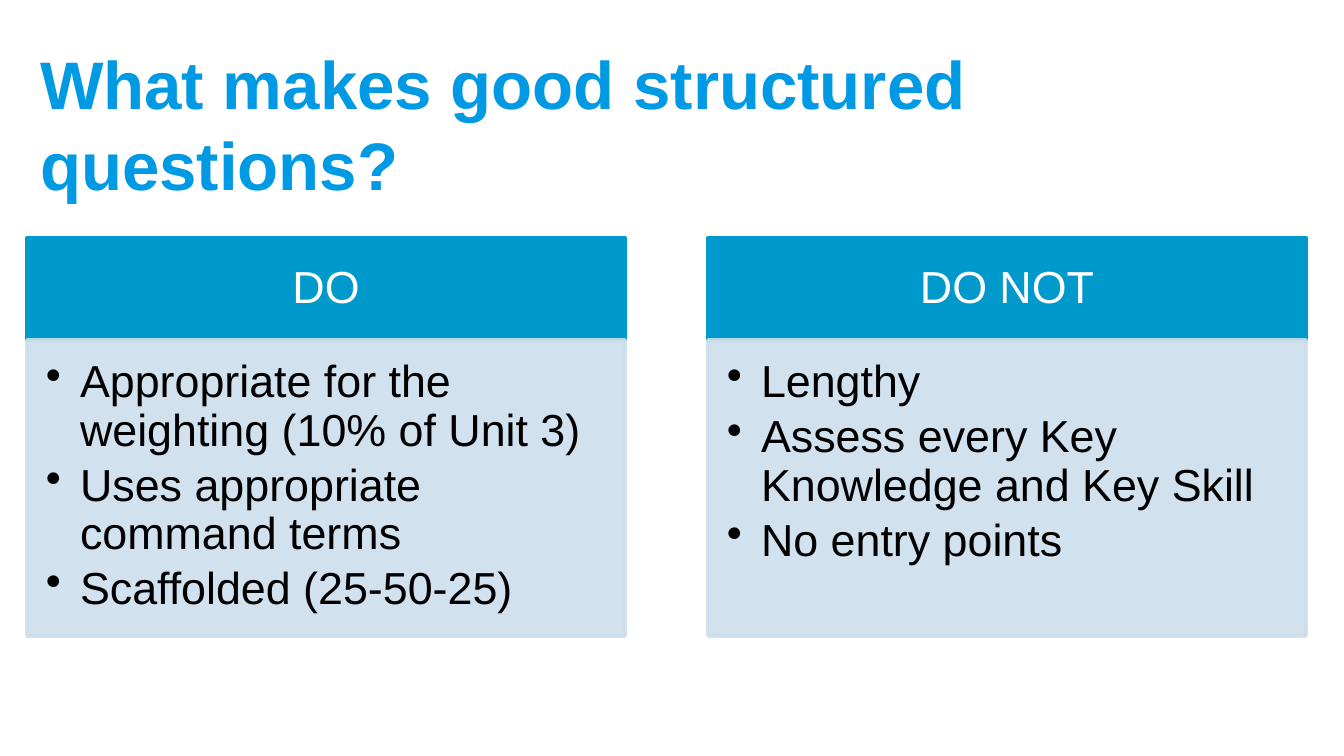
from pptx import Presentation
from pptx.dml.color import RGBColor
from pptx.enum.shapes import MSO_SHAPE as SHAPE
from pptx.enum.text import MSO_ANCHOR as ANCHOR, PP_ALIGN as ALIGN
from pptx.oxml.ns import qn
from pptx.util import Pt
from lxml.etree import SubElement

PX = 914400 / 134.4
COLORS = {"title": "0099E3", "header": "0099CC", "body": "CCDEEC",
          "white": "FFFFFF", "black": "000000"}
COLUMNS = [
    ("DO", ["Appropriate for the weighting (10% of Unit 3)",
            "Uses appropriate command terms",
            "Scaffolded (25-50-25)"]),
    ("DO NOT", ["Lengthy",
                "Assess every Key Knowledge and Key Skill",
                "No entry points"]),
]
LEFT, COLUMN_WIDTH, COLUMN_STEP = 27, 598, 681
HEADER_TOP, HEADER_HEIGHT, BODY_HEIGHT = 238, 102, 296


def px(*values):
    return [round(value * PX) for value in values]


def add_panel(box, color, insets, anchor):
    panel = slide.shapes.add_shape(SHAPE.RECTANGLE, *px(*box))
    panel.shadow.inherit = False
    panel.fill.solid()
    panel.line.width = Pt(2)
    for paint in (panel.fill, panel.line.fill):
        paint.solid()
        paint.fore_color.rgb = RGBColor.from_string(COLORS[color])
    frame = panel.text_frame
    frame.word_wrap = True
    frame.vertical_anchor = anchor
    (frame.margin_left, frame.margin_top,
     frame.margin_right, frame.margin_bottom) = px(*insets)
    return panel


prs = Presentation()
prs.slide_width, prs.slide_height = px(1344, 756)
slide = prs.slides.add_slide(prs.slide_layouts[6])

title = slide.shapes.add_textbox(*px(LEFT, 60, 1281, 126)).text_frame
title.word_wrap = True
title.vertical_anchor = ANCHOR.MIDDLE
heading = title.paragraphs[0]
heading.text = "What makes good structured questions?"
heading.font.name = "Arial"
heading.font.size = Pt(36)
heading.font.bold = True
heading.font.color.rgb = RGBColor.from_string(COLORS["title"])

for index, (label, points) in enumerate(COLUMNS):
    left = LEFT + index * COLUMN_STEP
    header = add_panel((left, HEADER_TOP, COLUMN_WIDTH, HEADER_HEIGHT),
                       "header", (26, 15, 26, 15), ANCHOR.MIDDLE)
    body = add_panel((left, HEADER_TOP + HEADER_HEIGHT, COLUMN_WIDTH, BODY_HEIGHT),
                     "body", (19, 19, 26, 28), ANCHOR.TOP)
    for color in body._element.spPr.iter(qn("a:srgbClr")):
        SubElement(color, qn("a:alpha"), val="90000")

    header.text_frame.text = label
    body.text_frame.text = "\n".join(points)
    for panel, ink, align, gap in ((header, "white", ALIGN.CENTER, 8.4),
                                   (body, "black", ALIGN.LEFT, 3.6)):
        for paragraph in panel.text_frame.paragraphs:
            paragraph.alignment = align
            paragraph.line_spacing = 0.9
            paragraph.space_after = Pt(gap)
            if panel is body:
                props = paragraph._p.get_or_add_pPr()
                indent = px(34)[0]
                props.set("marL", str(indent))
                props.set("indent", str(-indent))
                SubElement(props, qn("a:buChar"), char="•")
            paragraph.font.name = "Arial"
            paragraph.font.size = Pt(24)
            paragraph.font.color.rgb = RGBColor.from_string(COLORS[ink])

prs.save("out.pptx")
